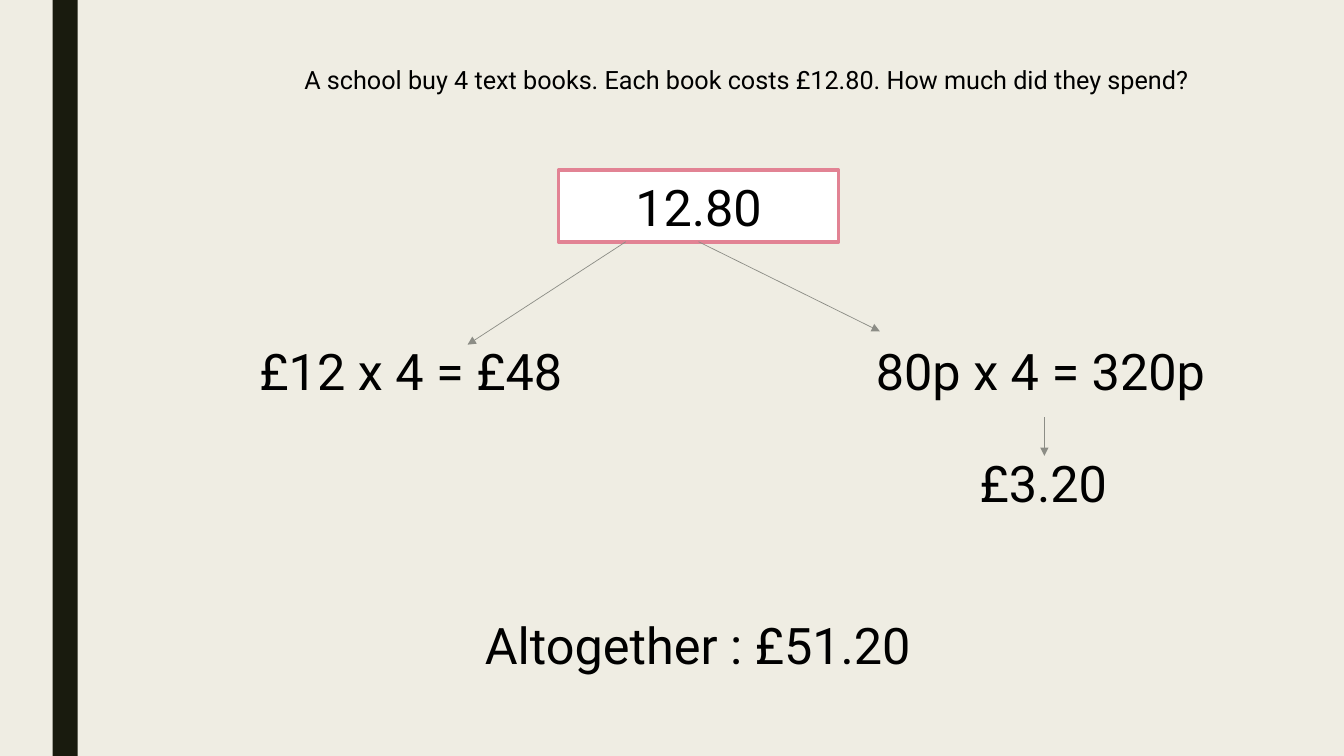
from pptx import Presentation
from pptx.dml.color import RGBColor
from pptx.enum.shapes import MSO_CONNECTOR as Connector, MSO_SHAPE as Preset
from pptx.enum.text import MSO_ANCHOR as Anchor, MSO_AUTO_SIZE as AutoSize, PP_ALIGN as Align
from pptx.oxml.ns import qn
from pptx.util import Pt
from lxml.etree import SubElement

CREAM = RGBColor(0xEF, 0xED, 0xE3)
DARK = RGBColor(0x19, 0x1B, 0x0E)
WHITE = RGBColor(0xFF, 0xFF, 0xFF)
PINK = RGBColor(0xE2, 0x83, 0x94)
GREY = RGBColor(0x8C, 0x8D, 0x86)
BLACK = RGBColor(0, 0, 0)

LINE_HEIGHT = 51
FRAME_FORMAT = {
    "word_wrap": True,
    "auto_size": AutoSize.NONE,
    "margin_left": Pt(7.2),
    "margin_right": Pt(7.2),
    "margin_top": Pt(3.6),
    "margin_bottom": Pt(3.6),
}


def write(holder, wording, size=36, anchor=Anchor.TOP):
    frame = holder.text_frame
    for key, value in {**FRAME_FORMAT, "vertical_anchor": anchor}.items():
        setattr(frame, key, value)
    frame.text = wording
    paragraph = frame.paragraphs[0]
    paragraph.alignment = Align.CENTER
    font = paragraph.runs[0].font
    for key, value in {"name": "Roboto", "size": Pt(size), "bold": False}.items():
        setattr(font, key, value)
    font.color.rgb = BLACK


def add_step(slide, wording, left, top, width):
    step = slide.shapes.add_textbox(Pt(left), Pt(top), Pt(width), Pt(LINE_HEIGHT))
    write(step, wording)


def add_box(slide, left, top, width, height, fill):
    box = slide.shapes.add_shape(Preset.RECTANGLE, Pt(left), Pt(top), Pt(width), Pt(height))
    box.shadow.inherit = False
    box.fill.solid()
    box.fill.fore_color.rgb = fill
    box.line.fill.background()
    return box


def add_arrow(slide, *ends):
    arrow = slide.shapes.add_connector(Connector.STRAIGHT, *map(Pt, ends))
    arrow.line.color.rgb = GREY
    arrow.line.width = Pt(0.5)
    SubElement(arrow.line._get_or_add_ln(), qn("a:tailEnd"), type="triangle")
    SubElement(arrow._element.spPr, qn("a:effectLst"))
    return arrow


def add_question(slide, left, top, width, height):
    question = slide.shapes.title
    place = {"left": left, "top": top, "width": width, "height": height}
    for key, value in place.items():
        setattr(question, key, Pt(value))
    write(question, "A school buy 4 text books. Each book costs £12.80. How much did they spend?", 18)


def add_partition(slide, left, top, width):
    price_left, price_width = left + 225.5, 200
    price_bottom = top + LINE_HEIGHT
    price = add_box(slide, price_left, top, price_width, LINE_HEIGHT, WHITE)
    price.line.color.rgb = PINK
    price.line.width = Pt(2.75)
    write(price, "12.80", anchor=Anchor.MIDDLE)

    pence_width = 271.5
    pence_left = left + width - pence_width - 2
    add_step(slide, "£12 x 4 = £48", left, top + 118, 240)
    add_step(slide, "80p x 4 = 320p", pence_left, top + 117.5, pence_width)
    add_step(slide, "£3.20", pence_left + 2, top + 198, pence_width)

    add_arrow(slide, price_left + 48, price_bottom, left + 160.5, top + 124.5)
    to_pence = add_arrow(slide, price_left + price_width / 2, price_bottom,
                         pence_left + 21, top + 115)
    to_pence.begin_connect(price, 2)
    to_pounds = pence_left + 138.5
    add_arrow(slide, to_pounds, top + 176.5, to_pounds, top + 204)


def build_problem(slide, width, height):
    slide.background.fill.solid()
    slide.background.fill.fore_color.rgb = CREAM
    add_box(slide, 37.5, 0, 18, height, DARK)
    add_question(slide, 130.5, 42, 805.5, 29)
    add_partition(slide, 173.5, 121.7, width - 252.5)
    add_step(slide, "Altogether : £51.20", 166, height - 105, 665)


def main():
    deck = Presentation()
    width, height = 960, 540
    deck.slide_width, deck.slide_height = Pt(width), Pt(height)
    build_problem(deck.slides.add_slide(deck.slide_layouts[5]), width, height)
    deck.save("out.pptx")


if __name__ == "__main__":
    main()
